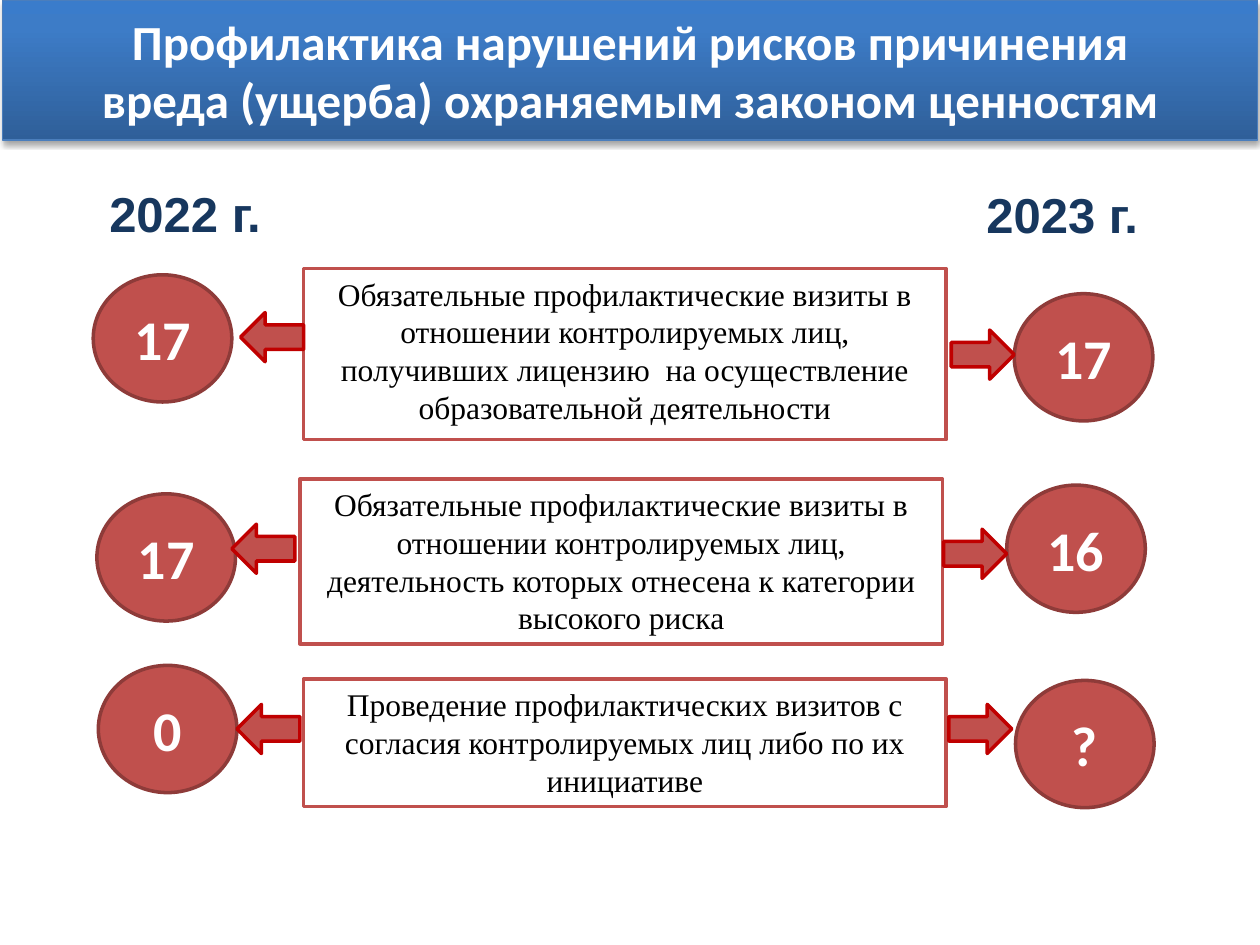
"""Builds a slide comparing preventive visits in 2022 and 2023."""
from copy import deepcopy

from lxml.etree import SubElement
from pptx import Presentation
from pptx.dml.color import RGBColor
from pptx.enum.shapes import MSO_SHAPE
from pptx.enum.text import MSO_ANCHOR, MSO_AUTO_SIZE, PP_ALIGN
from pptx.oxml.ns import qn
from pptx.util import Pt

COLORS = {
    "white": "FFFFFF", "black": "000000", "navy": "17375E",
    "red": "C0504D", "dark_red": "8E3B39", "arrow_line": "C00000",
    "title_line": "4B7EBC", "title_dark": "2F5F99",
    "title_mid": "3D7CC7", "title_light": "3A7CCB",
}


def rgb(name):
    return RGBColor.from_string(COLORS[name])


def add_item(text="", *, box, shape=None, fill=None, line=None, width=2,
             font="Calibri", size=18, color="white", bold=False,
             align=PP_ALIGN.CENTER, anchor=MSO_ANCHOR.MIDDLE, wrap=True, grow=False):
    box = [Pt(v) for v in box]
    if shape is None:
        sp = s.shapes.add_textbox(*box)
    else:
        sp = s.shapes.add_shape(shape, *box)
        sp.shadow.inherit = False
        sp.line.color.rgb = rgb(line)
        sp.line.width = Pt(width)
    if fill:
        sp.fill.solid()
        sp.fill.fore_color.rgb = rgb(fill)
    tf = sp.text_frame
    tf.word_wrap = wrap
    tf.vertical_anchor = anchor
    if grow:
        tf.auto_size = MSO_AUTO_SIZE.SHAPE_TO_FIT_TEXT
    for i, part in enumerate(text.split("\n") if text else []):
        p = tf.add_paragraph() if i else tf.paragraphs[0]
        p.alignment = align
        r = p.add_run()
        r.text = part
        r.font.name = font
        r.font.size = Pt(size)
        r.font.bold = bold
        r.font.color.rgb = rgb(color)
    return sp


prs = Presentation()
prs.slide_width, prs.slide_height = Pt(720), Pt(540)
s = prs.slides.add_slide(prs.slide_layouts[6])

title = add_item(
    "Профилактика нарушений рисков причинения\n"
    "вреда (ущерба) охраняемым законом ценностям",
    box=(1.4, 0, 717.2, 80), shape=MSO_SHAPE.RECTANGLE, line="title_line",
    width=0.75, size=28, bold=True, wrap=False)
title.fill.gradient()
title.fill.gradient_angle = 90
stop_list = title._element.spPr.find(".//" + qn("a:gsLst"))
stop_list.append(deepcopy(stop_list[-1]))
stops = zip(title.fill.gradient_stops, (0, 0.8, 1),
            ("title_dark", "title_mid", "title_light"))
for stop, position, name in stops:
    stop.position = position
    stop.color.rgb = rgb(name)
effects = title._element.spPr.find(qn("a:effectLst"))
shadow = SubElement(effects, qn("a:outerShdw"), blurRad=str(Pt(3.1)),
                    dist=str(Pt(1.8)), dir="5400000", rotWithShape="0")
shade = SubElement(shadow, qn("a:srgbClr"), val=COLORS["black"])
SubElement(shade, qn("a:alpha"), val="35000")

rows = [
    ("Обязательные профилактические визиты в отношении контролируемых лиц, "
     "получивших лицензию  на осуществление образовательной деятельности",
     (173.5, 153.4, 367.2, 97.9),
     ("17", 53.3, 157, 137.5, 178.6), ("17", 579.6, 167.8, 543.6, 188.6)),
    ("Обязательные профилактические визиты в отношении контролируемых лиц, "
     "деятельность которых отнесена к категории высокого риска",
     (171.4, 273.6, 367.2, 94.3),
     ("17", 55.4, 282.2, 132.5, 299.5), ("16", 575.3, 277.2, 539.3, 302.4)),
    ("Проведение профилактических визитов с согласия контролируемых лиц "
     "либо по их инициативе",
     (173.5, 388.1, 367.2, 72.7),
     ("0", 56.2, 380.2, 135.4, 402.5), ("?", 580.3, 388.8, 542.2, 402.5)),
]
for text, box, *sides in rows:
    add_item(text, box=box, shape=MSO_SHAPE.RECTANGLE, fill="white", line="red",
             font="Times New Roman", color="black", anchor=MSO_ANCHOR.TOP, grow=True)
    for side, arrow in zip(sides, (MSO_SHAPE.LEFT_ARROW, MSO_SHAPE.RIGHT_ARROW)):
        count, x, y, arrow_x, arrow_y = side
        add_item(count, box=(x, y, 79.2, 72.7), shape=MSO_SHAPE.OVAL,
                 fill="red", line="dark_red", size=32, bold=True)
        add_item(box=(arrow_x, arrow_y, 36, 28.1), shape=arrow,
                 fill="red", line="arrow_line")

for year, x, y in (("2022 г.", 55.4, 101.5), ("2023 г.", 556.6, 102.2)):
    add_item(year, box=(x, y, 124.6, 41), font="Arial", size=28, color="navy",
             bold=True, align=PP_ALIGN.LEFT, anchor=MSO_ANCHOR.TOP, grow=True)

prs.save("out.pptx")
